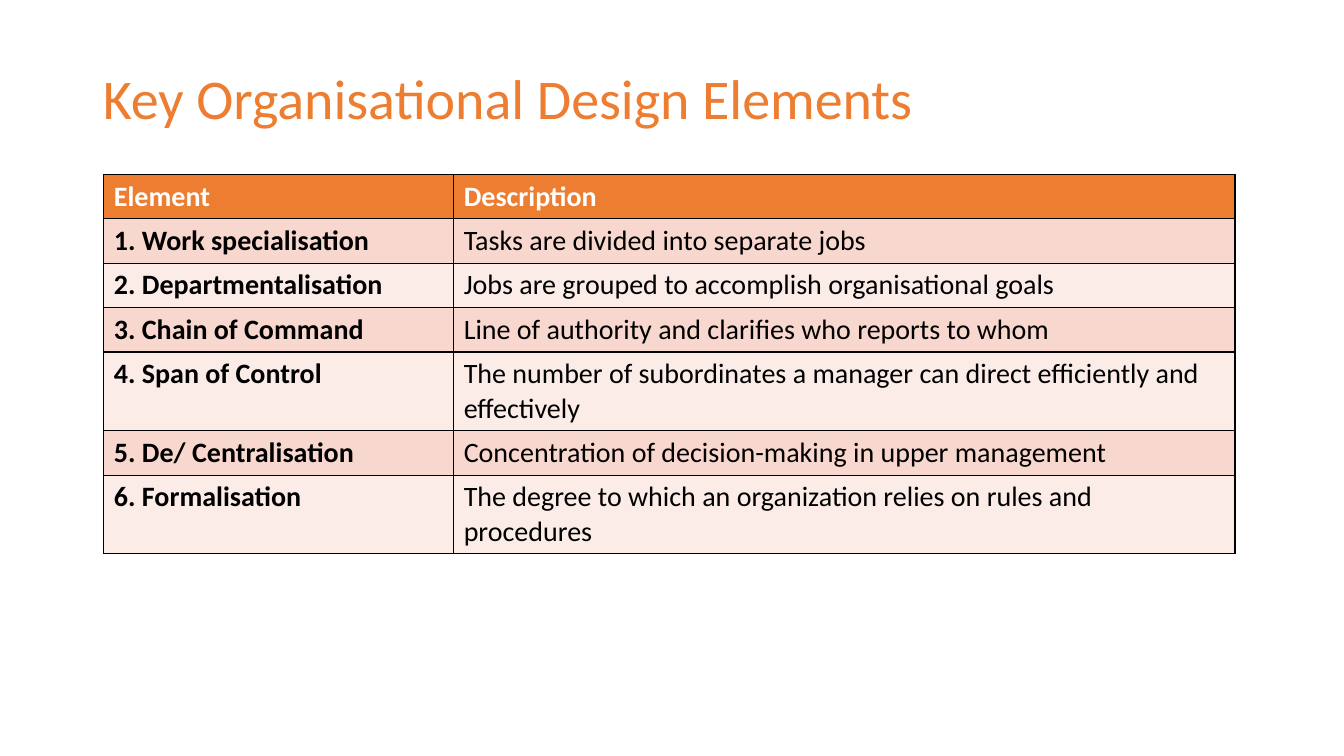
from lxml import etree
from pptx import Presentation
from pptx.dml.color import RGBColor
from pptx.enum.text import MSO_ANCHOR, PP_ALIGN
from pptx.oxml.ns import qn
from pptx.util import Inches, Pt

TITLE = "Key Organisational Design Elements"
HEADER = ("Element", "Description")
ELEMENTS = [
    ("1. Work specialisation", "Tasks are divided into separate jobs"),
    ("2. Departmentalisation", "Jobs are grouped to accomplish organisational goals"),
    ("3. Chain of Command", "Line of authority and clarifies who reports to whom"),
    ("4. Span of Control",
     "The number of subordinates a manager can direct efficiently and effectively"),
    ("5. De/ Centralisation", "Concentration of decision-making in upper management"),
    ("6. Formalisation",
     "The degree to which an organization relies on rules and procedures"),
]
COLUMN_WIDTHS = (3.47, 7.75)
ROW_HEIGHT = 0.41

FONT = "Calibri"
ORANGE = RGBColor(0xED, 0x7D, 0x31)
DARK_BAND = RGBColor(0xF8, 0xD7, 0xCE)
LIGHT_BAND = RGBColor(0xFC, 0xEC, 0xE8)
WHITE = RGBColor(0xFF, 0xFF, 0xFF)
BLACK = RGBColor(0, 0, 0)
LEFT = PP_ALIGN.LEFT
MIDDLE = MSO_ANCHOR.MIDDLE


def write_run(paragraph, text, size, color, bold=False):
    """Add one formatted run to a paragraph."""
    run = paragraph.add_run()
    run.text = text
    run.font.name = FONT
    run.font.size = Pt(size)
    run.font.bold = bold
    run.font.color.rgb = color


def add_borders(cell):
    """Draw a thin black line on each side of a cell."""
    properties = cell._tc.get_or_add_tcPr()
    for index, side in enumerate(("lnL", "lnR", "lnT", "lnB")):
        line = etree.Element(qn(f"a:{side}"), w=str(Pt(1)))
        fill = etree.SubElement(line, qn("a:solidFill"))
        etree.SubElement(fill, qn("a:srgbClr"), val=str(BLACK))
        properties.insert(index, line)


def add_title(slide):
    """Place and format the slide title."""
    title = slide.shapes.title
    title.left, title.top = Inches(0.92), Inches(0.28)
    title.width, title.height = Inches(11.5), Inches(1.45)
    title.text_frame.vertical_anchor = MIDDLE
    paragraph = title.text_frame.paragraphs[0]
    paragraph.alignment = LEFT
    paragraph.line_spacing = 0.9
    write_run(paragraph, TITLE, 40, ORANGE)


def add_elements_table(slide):
    """Add the table of design elements with banded rows."""
    rows = [HEADER, *ELEMENTS]
    table = slide.shapes.add_table(
        len(rows), len(HEADER), Inches(1.03), Inches(1.73),
        Inches(sum(COLUMN_WIDTHS)), Inches(ROW_HEIGHT * len(rows))).table
    for column, width in zip(table.columns, COLUMN_WIDTHS):
        column.width = Inches(width)
    for row_index, row in enumerate(rows):
        table.rows[row_index].height = Inches(ROW_HEIGHT)
        is_header = row_index == 0
        band = DARK_BAND if row_index % 2 else LIGHT_BAND
        for column_index, text in enumerate(row):
            cell = table.cell(row_index, column_index)
            cell.fill.solid()
            cell.fill.fore_color.rgb = ORANGE if is_header else band
            write_run(cell.text_frame.paragraphs[0], text, 20,
                      WHITE if is_header else BLACK,
                      is_header or column_index == 0)
            add_borders(cell)


def main():
    """Build and save the slide."""
    presentation = Presentation()
    presentation.slide_width = Inches(13.33)
    presentation.slide_height = Inches(7.5)
    slide = presentation.slides.add_slide(presentation.slide_layouts[5])
    add_title(slide)
    add_elements_table(slide)
    presentation.save("out.pptx")


if __name__ == "__main__":
    main()
